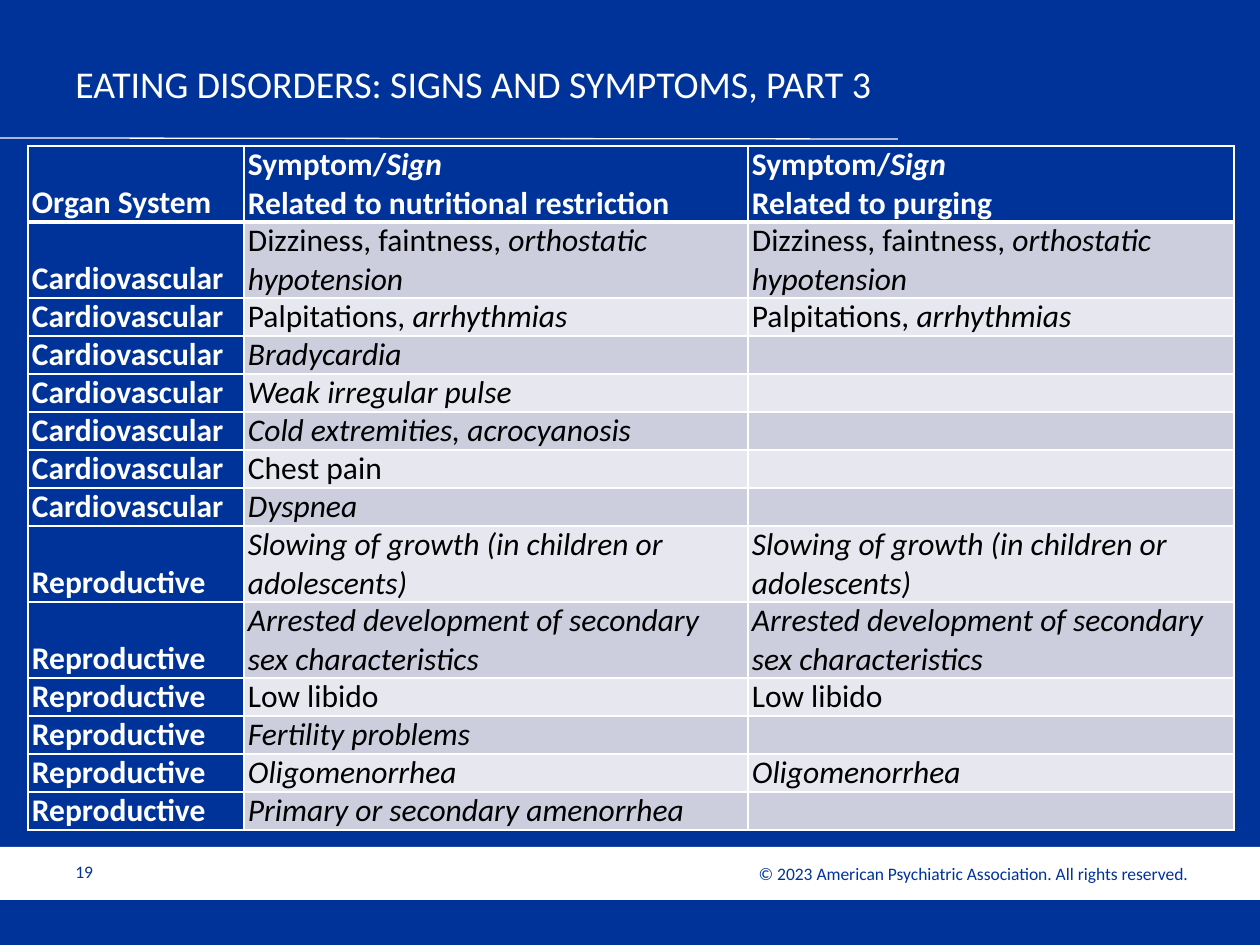
"""Build the slide on signs and symptoms of eating disorders."""
from lxml import etree
from pptx import Presentation
from pptx.dml.color import RGBColor
from pptx.enum.shapes import MSO_CONNECTOR, MSO_SHAPE
from pptx.enum.text import MSO_ANCHOR, PP_ALIGN
from pptx.oxml.ns import qn
from pptx.util import Pt

SCALE = 914400 / 126
LEFT, RIGHT = PP_ALIGN.LEFT, PP_ALIGN.RIGHT
MIDDLE, BOTTOM = MSO_ANCHOR.MIDDLE, MSO_ANCHOR.BOTTOM
RECT, STRAIGHT = MSO_SHAPE.RECTANGLE, MSO_CONNECTOR.STRAIGHT
FONT = "Calibri"
COLORS = {
    "blue": "003399",
    "white": "FFFFFF",
    "black": "000000",
    "dark": "CCCEDE",
    "light": "E7E8EF",
}
WIDTHS = [216, 504, 486]
LINE = 38
HEAD = [
    "Organ System",
    "Symptom/*Sign*\nRelated to nutritional restriction",
    "Symptom/*Sign*\nRelated to purging",
]
DIZZY = "Dizziness, faintness, *orthostatic hypotension*"
PULSE = "Palpitations, *arrhythmias*"
GROWTH = "*Slowing of growth (in children or adolescents)*"
ARREST = "*Arrested development of secondary sex characteristics*"
LONG = {DIZZY, GROWTH, ARREST, HEAD[1]}
SIGNS = {
    "Cardiovascular": [
        (DIZZY, DIZZY),
        (PULSE, PULSE),
        ("*Bradycardia*", ""),
        ("*Weak irregular pulse*", ""),
        ("*Cold extremities, acrocyanosis*", ""),
        ("Chest pain", ""),
        ("*Dyspnea*", ""),
    ],
    "Reproductive": [
        (GROWTH, GROWTH),
        (ARREST, ARREST),
        ("Low libido", "Low libido"),
        ("*Fertility problems*", ""),
        ("*Oligomenorrhea*", "*Oligomenorrhea*"),
        ("*Primary or secondary amenorrhea*", ""),
    ],
}


def px(num):
    """Turn px into EMU."""
    return round(num * SCALE)


def rgb(name):
    """Look up a colour by name."""
    return RGBColor.from_string(COLORS[name])


def write(frame, text, size=18, color="white", bold=False, align=LEFT):
    """Fill a text frame; parts between asterisks are italic."""
    frame.word_wrap = True
    for i, line in enumerate(text.split("\n")):
        para = frame.add_paragraph() if i else frame.paragraphs[0]
        para.alignment = align
        for j, part in enumerate(line.split("*")):
            if part:
                run = para.add_run()
                run.text = part
                font = run.font
                font.name, font.size = FONT, Pt(size)
                font.bold, font.italic = bold, j % 2 == 1
                font.color.rgb = rgb(color)


def add_text(slide, box, text, **fmt):
    """Add a text box with its text centred in height."""
    frame = slide.shapes.add_textbox(*map(px, box)).text_frame
    frame.vertical_anchor = MIDDLE
    write(frame, text, **fmt)


def add_band(slide, box, color):
    """Add a plain filled rectangle."""
    shape = slide.shapes.add_shape(RECT, *map(px, box))
    shape.shadow.inherit = False
    shape.fill.solid()
    shape.fill.fore_color.rgb = rgb(color)
    shape.line.fill.background()


def add_rule(slide, ends, color, width):
    """Add a straight line without a shadow."""
    line = slide.shapes.add_connector(STRAIGHT, *map(px, ends))
    line.line.color.rgb = rgb(color)
    line.line.width = Pt(width)
    etree.SubElement(line._element.spPr, qn("a:effectLst"))


def set_edges(cell, **widths):
    """Draw white cell borders with the given widths in points."""
    props = cell._tc.get_or_add_tcPr()
    for side in "LRTB":
        width = Pt(widths.get(side, 1))
        edge = etree.SubElement(props, qn(f"a:ln{side}"), w=str(width))
        fill = etree.SubElement(edge, qn("a:solidFill"))
        etree.SubElement(fill, qn("a:srgbClr"), val=COLORS["white"])


def set_cell(cell, text, fill, edges, **fmt):
    """Set the borders, fill and text of a cell."""
    set_edges(cell, **edges)
    cell.fill.solid()
    cell.fill.fore_color.rgb = rgb(fill)
    cell.margin_left = cell.margin_right = px(4)
    cell.margin_top = cell.margin_bottom = 0
    cell.vertical_anchor = BOTTOM
    write(cell.text_frame, text, **fmt)


def add_signs(slide, left, top):
    """Add the table of signs by organ system."""
    rows = [HEAD] + [(organ, *pair) for organ in SIGNS for pair in SIGNS[organ]]
    highs = [LINE * (2 if row[1] in LONG else 1) for row in rows]
    box = map(px, (left, top, sum(WIDTHS), sum(highs)))
    table = slide.shapes.add_table(len(rows), len(WIDTHS), *box).table
    table.horz_banding = False
    for col, width in zip(table.columns, WIDTHS):
        col.width = px(width)
    for i, (row, high) in enumerate(zip(rows, highs)):
        table.rows[i].height = px(high)
        edges = {0: {"B": 3}, 1: {"T": 3}}.get(i, {})
        for j, text in enumerate(row):
            head = i == 0 or j == 0
            fill = "blue" if head else "dark" if i % 2 else "light"
            color = "white" if head else "black"
            set_cell(table.cell(i, j), text, fill, edges, color=color, bold=head)


def main():
    """Build and save the slide."""
    deck = Presentation()
    deck.slide_width, deck.slide_height = px(1260), px(945)
    slide = deck.slides.add_slide(deck.slide_layouts[6])
    slide.background.fill.solid()
    slide.background.fill.fore_color.rgb = rgb("blue")
    add_band(slide, (0, 847, 1260, 53), "white")
    add_rule(slide, (0, 138, 898, 139), "white", 0.75)
    add_text(slide, (653, 856, 551, 34),
             "© 2023 American Psychiatric Association. All rights reserved. ",
             size=10, color="blue", align=RIGHT)
    add_text(slide, (63, 847, 294, 50), "19", size=10, color="blue")
    add_text(slide, (63, 43, 835, 81),
             "EATING DISORDERS: SIGNS AND SYMPTOMS, PART 3", size=21.6)
    add_signs(slide, 28, 146)
    deck.save("out.pptx")


if __name__ == "__main__":
    main()
